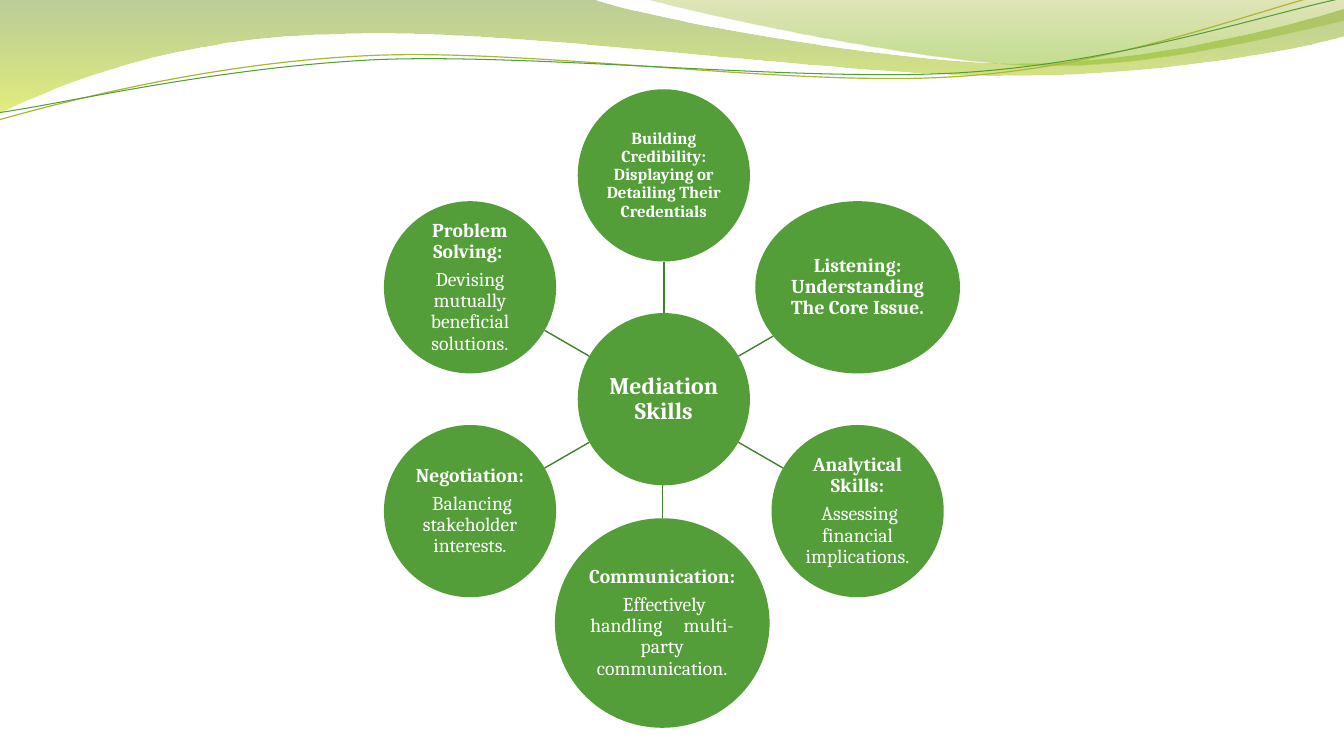
import math

import pptx
import pptx.dml.color
import pptx.enum.shapes
import pptx.enum.text
import pptx.oxml.ns
import pptx.oxml.xmlchemy
import pptx.util

Cm = pptx.util.Cm
RGBColor = pptx.dml.color.RGBColor
qn = pptx.oxml.ns.qn
OxmlElement = pptx.oxml.xmlchemy.OxmlElement

GREEN = RGBColor(0x54, 0x9E, 0x39)
DARK_GREEN = RGBColor(0x43, 0x7F, 0x2E)
OLIVE = RGBColor(0xA9, 0xB7, 0x33)
MOSS = RGBColor(0x69, 0x92, 0x1C)
LIME = RGBColor(0xCC, 0xE1, 0x0F)
KHAKI = RGBColor(0x9B, 0xAA, 0x1A)
LEAF = RGBColor(0x81, 0xBA, 0x16)
WHITE = RGBColor(0xFF, 0xFF, 0xFF)
FONT = "Cambria"


def add_curve(s, start, segments, close):
    builder = s.shapes.build_freeform(Cm(start[0]), Cm(start[1]))
    for segment in segments:
        points = zip(segment[::2], segment[1::2])
        builder.add_line_segments([(Cm(x), Cm(y)) for x, y in points], close=False)
    if close:
        builder.add_line_segments([], close=True)
    sp = builder.convert_to_shape()
    sp.shadow.inherit = False
    lines = iter(list(sp._element.spPr.iter(qn("a:lnTo"))))
    for segment in segments:
        steps = [next(lines) for _ in segment[::2]]
        if len(steps) == 3:
            bezier = OxmlElement("a:cubicBezTo")
            steps[0].addprevious(bezier)
            for step in steps:
                bezier.append(step[0])
                step.getparent().remove(step)
    return sp


def add_text(p, text, size=14, bold=False, color=WHITE, spacing=0):
    p.alignment = pptx.enum.text.PP_ALIGN.CENTER
    p.line_spacing = 0.9
    p.space_after = pptx.util.Pt(0.35 * size)
    r = p.add_run()
    r.text = text
    r.font.name = FONT
    r.font.size = pptx.util.Pt(size)
    r.font.bold = bold
    r.font.color.rgb = color
    if spacing:
        r._r.get_or_add_rPr().set("spc", str(spacing * 100))


prs = pptx.Presentation()
prs.slide_width = Cm(33.87)
prs.slide_height = Cm(19.05)
s = prs.slides.add_slide(prs.slide_layouts[6])

waves = [
    ((0, 0),
     [(14.91, -0.03),
      (16.1, 0.43, 22.45, 1.6, 25.68, 1.6),
      (28.88, 1.6, 32.44, 0.66, 33.86, 0.23),
      (33.88, 0.91),
      (33.3, 1.12, 29.44, 1.93, 25.25, 1.91),
      (20.96, 1.91, 12.93, 0.71, 8.71, 0.86),
      (4.37, 0.91, 1.55, 2.11, -0.05, 2.87)],
     [(0, MOSS, 45), (1, LIME, 55)]),
    ((16.21, -0.03),
     [(17.25, 0.28, 23.09, 1.57, 26.04, 1.65),
      (28.96, 1.75, 32.56, 0.81, 33.86, 0.53),
      (33.86, 0)],
     [(0, KHAKI, 30), (0.8, LEAF, 45)]),
]
for start, segments, stops in waves:
    sp = add_curve(s, start, segments, True)
    sp.line.fill.background()
    sp.fill.gradient()
    sp.fill.gradient_angle = 270
    for stop, (position, color, opacity) in zip(sp.fill.gradient_stops, stops):
        stop.position = position
        stop.color.rgb = color
    colors = sp._element.spPr.iter(qn("a:srgbClr"))
    for color_element, (position, color, opacity) in zip(colors, stops):
        alpha = OxmlElement("a:alpha")
        alpha.set("val", str(opacity * 1000))
        color_element.append(alpha)

strands = [
    ((-0.03, 3.02),
     [(1.6, 2.57, 5.33, 1.57, 9.37, 1.4),
      (13.39, 1.22, 20.04, 2.21, 24.1, 1.93),
      (28.19, 1.68, 31.78, 0.2, 33.78, -0.25)],
     OLIVE, 0.85),
    ((-0.03, 2.84),
     [(1.57, 2.62, 5.54, 1.68, 9.58, 1.5),
      (13.64, 1.35, 20.22, 2.08, 24.26, 1.83),
      (28.3, 1.57, 31.88, 0.36, 33.86, -0.05)],
     GREEN, 0.75),
]
for start, segments, color, width in strands:
    sp = add_curve(s, start, segments, False)
    sp.fill.background()
    sp.line.color.rgb = color
    sp.line.width = pptx.util.Pt(width)

HUB_X, HUB_Y = 16.73, 10.06
DIAMETER = 4.34
ORBIT = 5.64
WORD_GAP = 12

skills = [
    ("Building Credibility: Displaying or Detailing Their Credentials",
     [], DIAMETER, DIAMETER, 12, 0),
    ("Listening: Understanding The Core Issue.", [], 5.16, DIAMETER, 14, 0),
    ("Analytical Skills:", [" Assessing financial implications."],
     DIAMETER, DIAMETER, 14, 0),
    ("Communication:", [" Effectively handling", "multi-party communication."],
     5.41, 5.28, 14, -0.04),
    ("Negotiation:", [" Balancing stakeholder interests."],
     DIAMETER, DIAMETER, 14, 0),
    ("Problem Solving: ", ["Devising mutually beneficial solutions."],
     DIAMETER, DIAMETER, 14, 0),
]
circles = [(HUB_X, HUB_Y, "Mediation Skills", [], DIAMETER, DIAMETER, 17)]
for i, (heading, details, width, height, size, shift) in enumerate(skills):
    angle = math.radians(i * 360 / len(skills) - 90)
    dx, dy = math.cos(angle), math.sin(angle)
    x = HUB_X + shift
    circles.append((x + ORBIT * dx, HUB_Y + ORBIT * dy,
                    heading, details, width, height, size))
    reach = ORBIT - 1 / math.hypot(dx / (width / 2), dy / (height / 2))
    spoke = s.shapes.add_connector(
        pptx.enum.shapes.MSO_CONNECTOR.STRAIGHT,
        Cm(x + DIAMETER / 2 * dx), Cm(HUB_Y + DIAMETER / 2 * dy),
        Cm(x + reach * dx), Cm(HUB_Y + reach * dy))
    spoke.line.color.rgb = DARK_GREEN
    spoke.line.width = pptx.util.Pt(1)
    spoke._element.spPr.append(OxmlElement("a:effectLst"))

for x, y, heading, details, width, height, size in circles:
    sp = s.shapes.add_shape(
        pptx.enum.shapes.MSO_SHAPE.OVAL,
        Cm(x - width / 2), Cm(y - height / 2), Cm(width), Cm(height))
    sp.shadow.inherit = False
    sp.fill.solid()
    sp.fill.fore_color.rgb = GREEN
    sp.line.fill.background()
    tf = sp.text_frame
    tf.word_wrap = True
    tf.vertical_anchor = pptx.enum.text.MSO_ANCHOR.MIDDLE
    tf.margin_left = tf.margin_right = Cm(0.03)
    tf.margin_top = tf.margin_bottom = Cm(0.03)
    add_text(tf.paragraphs[0], heading, size=size, bold=True)
    if details:
        p = tf.add_paragraph()
        add_text(p, details[0], size=size)
        for text in details[1:]:
            add_text(p, " ", size=size, spacing=WORD_GAP)
            add_text(p, text, size=size)

prs.save("out.pptx")
